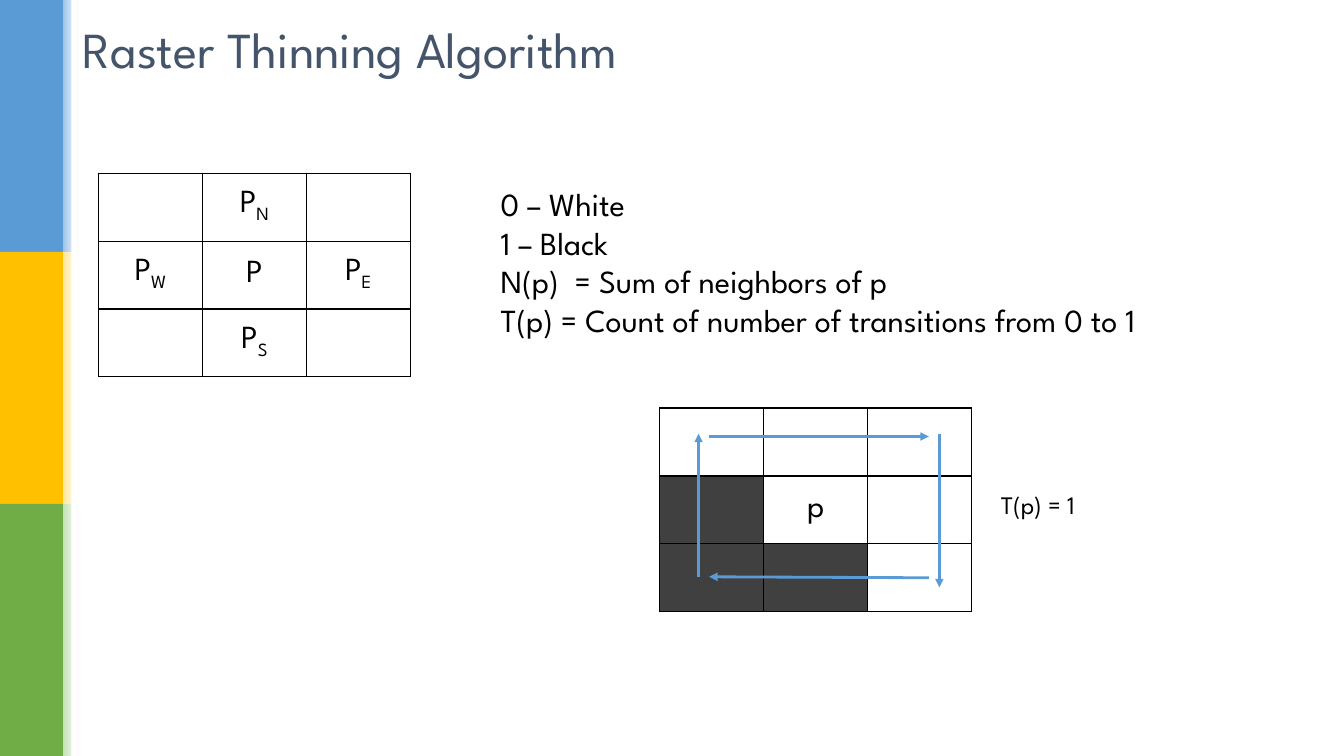
import pptx
import pptx.util
import pptx.dml.color
import pptx.enum.shapes
import pptx.enum.text
import pptx.oxml
import lxml.etree

Pt = pptx.util.Pt
ALIGN = pptx.enum.text.PP_ALIGN
MIDDLE = pptx.enum.text.MSO_ANCHOR.MIDDLE
RECT = pptx.enum.shapes.MSO_SHAPE.RECTANGLE
STRAIGHT = pptx.enum.shapes.MSO_CONNECTOR.STRAIGHT
NS = 'xmlns:a="http://schemas.openxmlformats.org/drawingml/2006/main"'
A = "{http://schemas.openxmlformats.org/drawingml/2006/main}"


def rgb(value):
    return pptx.dml.color.RGBColor.from_string(value)


def write(p, text, size=23, color="000000", align=ALIGN.LEFT, sub=""):
    p.alignment = align
    for part in filter(None, (text, sub)):
        r = p.add_run()
        r.text = part
        r.font.name = "League Spartan"
        r.font.size = Pt(size)
        r.font.color.rgb = rgb(color)
    if sub:
        r.font._element.set("baseline", "-25000")


prs = pptx.Presentation()
prs.slide_width, prs.slide_height = Pt(960), Pt(540)
s = prs.slides.add_slide(prs.slide_layouts[5])

bands = [("5B9BD5", "9DC3E6"), ("FFC000", "FFE699"), ("70AD47", "C5E0B4")]
strips = []
for i, (solid, pale) in enumerate(bands):
    strips.append((0, i * 180, 45, 180, solid, None))
    strips.append((45, i * 180, 11.5, 180, pale, "FFFFFF"))
strips.append((51, 0, 4, 540, "FFFFFF", None))
for x, y, w, h, color, fade in strips:
    sp = s.shapes.add_shape(RECT, Pt(x), Pt(y), Pt(w), Pt(h))
    sp.shadow.inherit = False
    sp.line.fill.background()
    if fade:
        sp.fill.gradient()
        sp.fill.gradient_angle = 0
        for stop, shade in zip(sp.fill.gradient_stops, (color, fade)):
            stop.color.rgb = rgb(shade)
    else:
        sp.fill.solid()
        sp.fill.fore_color.rgb = rgb(color)

title = s.shapes.title
title.left, title.top, title.width, title.height = Pt(52), Pt(7), Pt(793), Pt(55.5)
tf = title.text_frame
tf.auto_size = pptx.enum.text.MSO_AUTO_SIZE.NONE
tf.vertical_anchor = MIDDLE
write(tf.paragraphs[0], "Raster Thinning Algorithm", size=36, color="44546A")

neighbours = {(0, 1): ("P", "N"), (1, 0): ("P", "W"), (1, 1): ("P", ""),
              (1, 2): ("P", "E"), (2, 1): ("P", "S")}
grids = [(70.3, 123.8, neighbours, []),
         (471.3, 291.5, {(1, 1): ("p", "")}, [(1, 0), (2, 0), (2, 1)])]
for x, y, labels, black in grids:
    table = s.shapes.add_table(3, 3, Pt(x), Pt(y), Pt(222.75), Pt(145.5)).table
    table.first_row = table.horz_banding = False
    for i in range(3):
        table.columns[i].width = Pt(74.25)
        table.rows[i].height = Pt(48.5)
        for j in range(3):
            cell = table.cell(i, j)
            cell.vertical_anchor = MIDDLE
            tcPr = cell._tc.get_or_add_tcPr()
            for side in ("lnL", "lnR", "lnT", "lnB"):
                tcPr.append(pptx.oxml.parse_xml(
                    f'<a:{side} {NS} w="12700"><a:solidFill>'
                    f'<a:srgbClr val="000000"/></a:solidFill></a:{side}>'))
            if (i, j) in black:
                cell.fill.solid()
                cell.fill.fore_color.rgb = rgb("404040")
            else:
                cell.fill.background()
            if (i, j) in labels:
                text, sub = labels[i, j]
                write(cell.text_frame.paragraphs[0], text, align=ALIGN.CENTER, sub=sub)

definitions = ["0 – White", "1 – Black", "N(p)  = Sum of neighbors of p",
               "T(p) = Count of number of transitions from 0 to 1"]
notes = [(350.5, 128.3, 556, 119, 23, definitions),
         (707.8, 346.3, 104.5, 29, 18, ["T(p) = 1"])]
for x, y, w, h, size, lines in notes:
    tf = s.shapes.add_textbox(Pt(x), Pt(y), Pt(w), Pt(h)).text_frame
    tf.word_wrap = True
    for i, line in enumerate(lines):
        p = tf.add_paragraph() if i else tf.paragraphs[0]
        write(p, line, size=size)

arrows = [(506.5, 311.8, 663.5, 311.8), (671, 309.8, 671, 419.5),
          (663.5, 412.7, 506.5, 412), (499, 412, 499, 309.8)]
for ends in arrows:
    arrow = s.shapes.add_connector(STRAIGHT, *map(Pt, ends))
    arrow.line.color.rgb = rgb("5B9BD5")
    arrow.line.width = Pt(2)
    lxml.etree.SubElement(arrow.line._get_or_add_ln(), A + "tailEnd", type="triangle")
    lxml.etree.SubElement(arrow._element.spPr, A + "effectLst")

prs.save("out.pptx")
